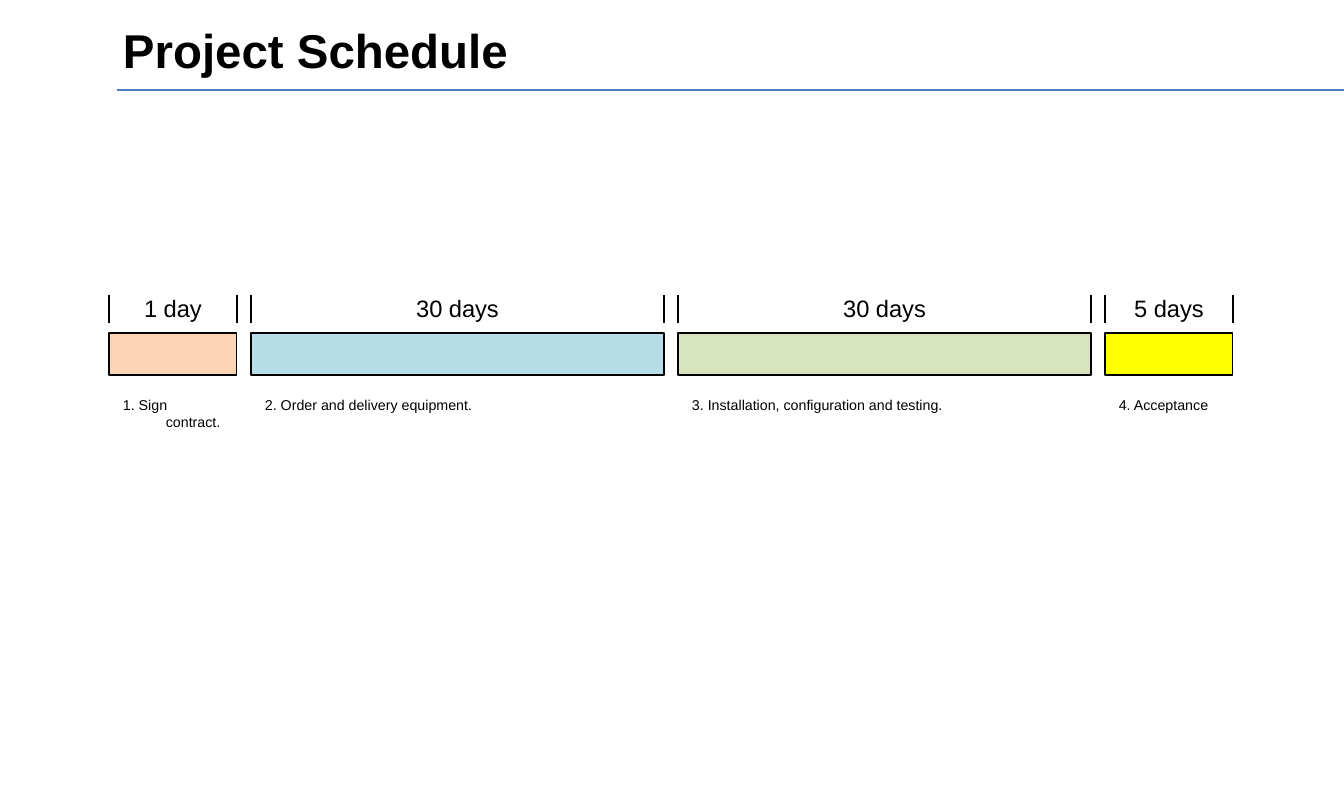
import pptx
import pptx.dml.color
import pptx.enum.shapes
import pptx.enum.text
import pptx.util
from lxml import etree

PX = 5360  # EMU per px
BLACK = "000000"
ALIGN = pptx.enum.text.PP_ALIGN
ANCHOR = pptx.enum.text.MSO_ANCHOR

BAR_LEFT, BAR_GAP = 109, 14
SHORT, LONG = 128, 413
STAGES = [
    ("1 day", "1. Sign contract.", "FCD5B5", SHORT),
    ("30 days", "2. Order and delivery equipment.", "B7DEE8", LONG),
    ("30 days", "3. Installation, configuration and testing.", "D7E4BD", LONG),
    ("5 days", "4. Acceptance", "FFFF00", SHORT),
]


def rgb(color):
    return pptx.dml.color.RGBColor.from_string(color)


class Deck:
    font = "Arial"

    def __init__(self, width, height):
        self.prs = pptx.Presentation()
        self.prs.slide_width = width * PX
        self.prs.slide_height = height * PX
        self.s = self.prs.slides.add_slide(self.prs.slide_layouts[5])

    def fill_text(self, sp, text, size, bold=False, align=ALIGN.LEFT, anchor=ANCHOR.TOP):
        """Set and format the single paragraph of a shape, and return it."""
        tf = sp.text_frame
        tf.text = text
        tf.word_wrap = True
        tf.auto_size = pptx.enum.text.MSO_AUTO_SIZE.NONE
        tf.vertical_anchor = anchor
        tf.margin_left = tf.margin_right = 14 * PX
        tf.margin_top = tf.margin_bottom = 7 * PX
        p = tf.paragraphs[0]
        p.alignment = align
        r = p.runs[0]
        r.font.name = self.font
        r.font.size = pptx.util.Pt(size)
        r.font.bold = bold
        r.font.color.rgb = rgb(BLACK)
        return p

    def title(self, text, x, y, w, h):
        sp = self.s.shapes.title
        sp.left, sp.top, sp.width, sp.height = (v * PX for v in (x, y, w, h))
        self.fill_text(sp, text, 20, bold=True, anchor=ANCHOR.BOTTOM)

    def text(self, text, x, y, w, h, size, align=ALIGN.LEFT, hanging=0):
        sp = self.s.shapes.add_textbox(x * PX, y * PX, w * PX, h * PX)
        p = self.fill_text(sp, text, size, align=align)
        if hanging:
            pPr = p._p.get_or_add_pPr()
            pPr.set("marL", str(hanging * PX))
            pPr.set("indent", str(-hanging * PX))

    def bar(self, x, y, w, h, fill):
        kind = pptx.enum.shapes.MSO_SHAPE.RECTANGLE
        sp = self.s.shapes.add_shape(kind, x * PX, y * PX, w * PX, h * PX)
        sp.shadow.inherit = False
        sp.fill.solid()
        sp.fill.fore_color.rgb = rgb(fill)
        sp.line.color.rgb = rgb(BLACK)
        sp.line.width = pptx.util.Pt(0.5)

    def line(self, x1, y1, x2, y2, color=BLACK, width=0.5):
        kind = pptx.enum.shapes.MSO_CONNECTOR.STRAIGHT
        c = self.s.shapes.add_connector(kind, x1 * PX, y1 * PX, x2 * PX, y2 * PX)
        c.line.color.rgb = rgb(color)
        c.line.width = pptx.util.Pt(width)
        etree.SubElement(c._element.spPr, pptx.oxml.ns.qn("a:effectLst"))

    def stage(self, duration, task, fill, x, w):
        self.bar(x, 333, w, 42, fill)
        self.text(duration, x, 287, w, 43, 10, align=ALIGN.CENTER)
        self.text(task, x, 389, w, 43, 6, hanging=43)
        for edge in (x, x + w):
            self.line(edge, 323, edge, 295)


def main():
    deck = Deck(1344, 807)
    deck.line(117, 90, 1344, 90, "4B7EBC", 0.75)
    deck.title("Project Schedule", 109, 14, 990, 71)
    x = BAR_LEFT
    for duration, task, fill, w in STAGES:
        deck.stage(duration, task, fill, x, w)
        x += w + BAR_GAP
    deck.prs.save("out.pptx")


if __name__ == "__main__":
    main()
